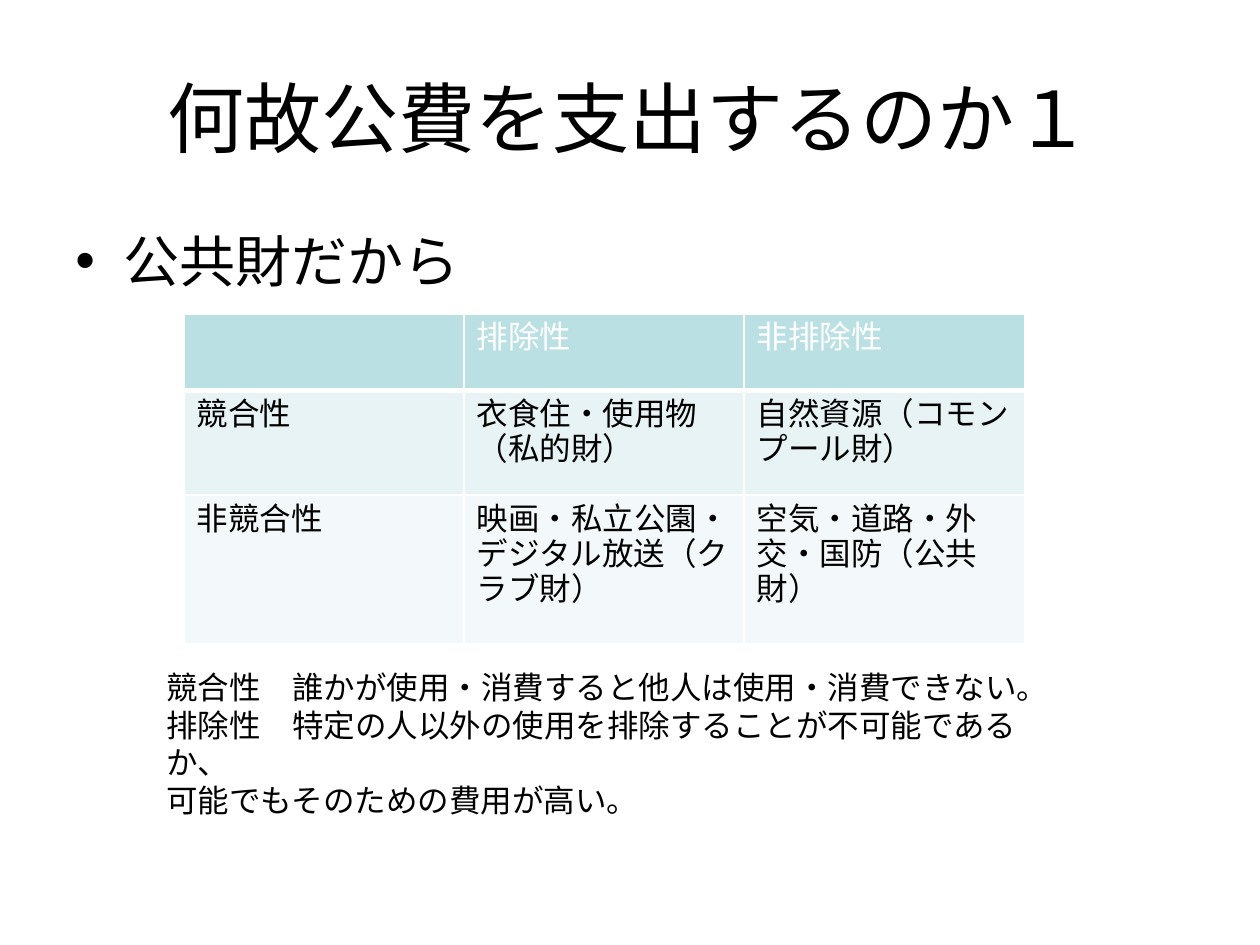
from dataclasses import dataclass

from lxml import etree
from pptx import Presentation
from pptx.dml.color import RGBColor
from pptx.enum.text import MSO_ANCHOR, PP_ALIGN
from pptx.oxml.ns import qn
from pptx.util import Inches, Pt

CENTER, LEFT = PP_ALIGN.CENTER, PP_ALIGN.LEFT
MIDDLE, TOP = MSO_ANCHOR.MIDDLE, MSO_ANCHOR.TOP


@dataclass(frozen=True)
class Theme:
    font: str = "Arial"
    ink: str = "000000"
    paper: str = "FFFFFF"
    row_fills: tuple = ("BBE0E3", "E7F3F4", "F3F9FA")
    title_size: int = 44
    body_size: int = 32
    small_size: int = 18
    rule: int = 1
    header_rule: int = 3


THEME = Theme()
GOODS = (
    ("", "排除性", "非排除性"),
    ("競合性", "衣食住・使用物（私的財）", "自然資源（コモンプール財）"),
    ("非競合性", "映画・私立公園・デジタル放送（クラブ財）", "空気・道路・外交・国防（公共財）"),
)
ROW_HEIGHTS = (0.61, 0.83, 1.18)
DEFINITIONS = (
    "競合性　誰かが使用・消費すると他人は使用・消費できない。",
    "排除性　特定の人以外の使用を排除することが不可能であるか、",
    "可能でもそのための費用が高い。",
)


def write(paragraph, text, size, color, align=LEFT):
    paragraph.alignment = align
    run = paragraph.add_run()
    run.text = text
    formats = {"name": THEME.font, "size": Pt(size), "bold": False}
    for attribute, value in formats.items():
        setattr(run.font, attribute, value)
    run.font.color.rgb = RGBColor.from_string(color)
    etree.SubElement(run._r.get_or_add_rPr(), qn("a:ea"), typeface=THEME.font)


def add_text(slide, box, lines, size, align=LEFT, anchor=TOP):
    frame = slide.shapes.add_textbox(*map(Inches, box)).text_frame
    formats = {"word_wrap": True, "vertical_anchor": anchor}
    for attribute, value in formats.items():
        setattr(frame, attribute, value)
    for index, line in enumerate(lines):
        paragraph = frame.add_paragraph() if index else frame.paragraphs[0]
        write(paragraph, line, size, THEME.ink, align)
    return frame


def add_title(slide, box):
    add_text(slide, box, ["何故公費を支出するのか１"], THEME.title_size, CENTER, MIDDLE)


def add_reason(slide, box):
    reason = add_text(slide, box, ["公共財だから"], THEME.body_size).paragraphs[0]
    reason.space_before = Pt(0.2 * THEME.body_size)
    properties = reason._p.get_or_add_pPr()
    indent = Inches(0.38)
    properties.set("marL", str(indent))
    properties.set("indent", str(-indent))
    etree.SubElement(properties, qn("a:buFont"), typeface=THEME.font)
    etree.SubElement(properties, qn("a:buChar"), char="•")


def add_borders(cell, widths):
    properties = cell._tc.get_or_add_tcPr()
    for side, width in widths.items():
        line = etree.SubElement(properties, qn(f"a:ln{side}"), w=str(Pt(width)))
        fill = etree.SubElement(line, qn("a:solidFill"))
        etree.SubElement(fill, qn("a:srgbClr"), val=THEME.paper)


def add_goods_table(slide, box):
    table = slide.shapes.add_table(len(GOODS), len(GOODS[0]), *map(Inches, box)).table
    for row, height in zip(table.rows, ROW_HEIGHTS):
        row.height = Inches(height)
    for r, texts in enumerate(GOODS):
        color = THEME.ink if r else THEME.paper
        widths = dict.fromkeys("LRTB", THEME.rule)
        if r < 2:
            widths["T" if r else "B"] = THEME.header_rule
        for c, text in enumerate(texts):
            cell = table.cell(r, c)
            add_borders(cell, widths)
            cell.fill.solid()
            cell.fill.fore_color.rgb = RGBColor.from_string(THEME.row_fills[r])
            if text:
                write(cell.text_frame.paragraphs[0], text, THEME.small_size, color)


def add_definitions(slide, box):
    add_text(slide, box, DEFINITIONS, THEME.small_size)


def main():
    deck = Presentation()
    deck.slide_width, deck.slide_height = Inches(10), Inches(7.5)
    slide = deck.slides.add_slide(deck.slide_layouts[6])
    add_title(slide, (0.5, 0.3, 9, 1.25))
    add_reason(slide, (0.5, 1.75, 9, 4.95))
    add_goods_table(slide, (1.46, 2.49, 6.67, sum(ROW_HEIGHTS)))
    add_definitions(slide, (1.22, 5.25, 7.09, 1.01))
    deck.save("out.pptx")


if __name__ == "__main__":
    main()
